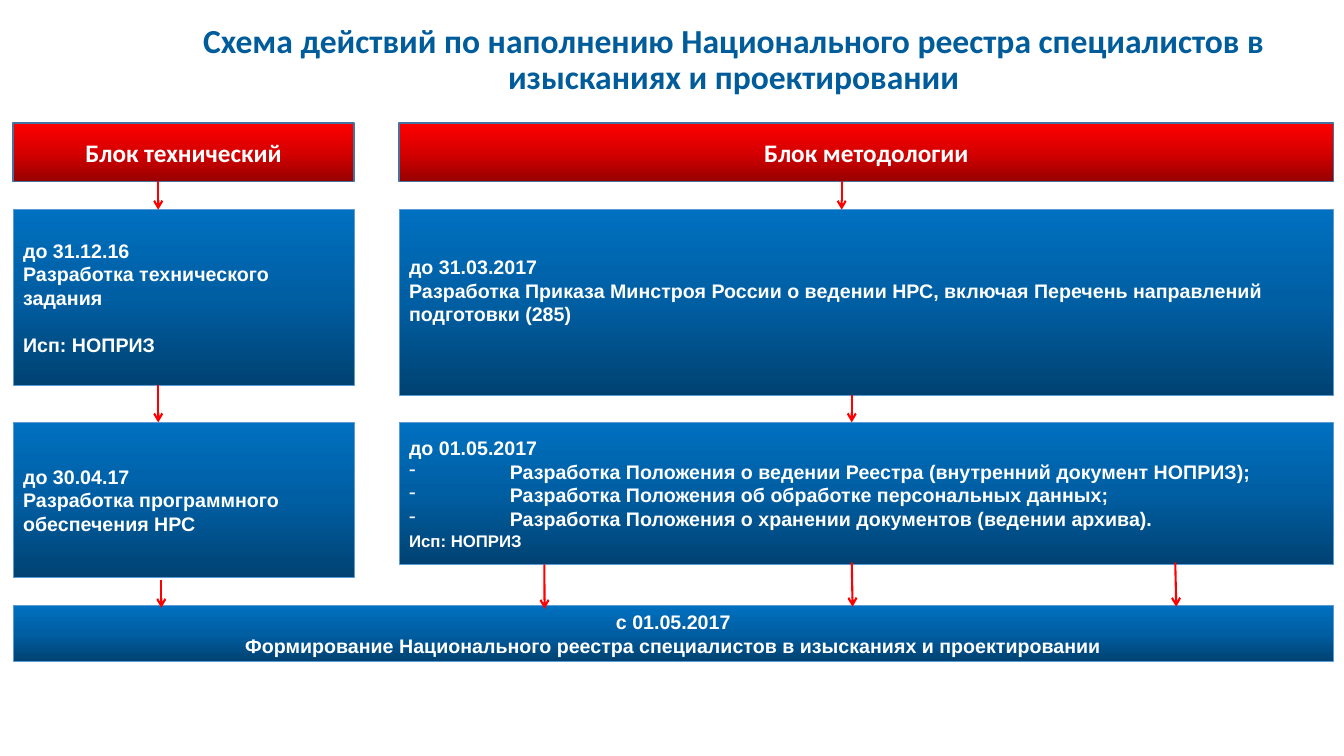
import copy

import pptx
import pptx.dml.color
import pptx.enum.dml
import pptx.enum.shapes
import pptx.enum.text
import pptx.oxml.ns
import pptx.util
from lxml import etree

Pt = pptx.util.Pt
CENTER = pptx.enum.text.PP_ALIGN.CENTER
LEFT = pptx.enum.text.PP_ALIGN.LEFT
MIDDLE = pptx.enum.text.MSO_ANCHOR.MIDDLE
qn = pptx.oxml.ns.qn

RED_GRADIENT = ("970000", "D70000", "FF0000")
BLUE_GRADIENT = ("004272", "005EA2", "0070C0")
LEFT_COLUMN = (9.4, 243.4)
RIGHT_COLUMN = (285.1, 667.4)
FULL_WIDTH = (9.4, 943.1)
HEADER_TOP, STAGE_1_TOP, STAGE_2_TOP, RESULT_TOP = 87.8, 149.8, 301.7, 432.7


def color(hex_string):
    return pptx.dml.color.RGBColor.from_string(hex_string)


def add_block(column, top, height, gradient, border, lines, size, font, alignment):
    """Add a gradient rectangle with white bold lines and return its text frame."""
    left, width = column
    shape = slide.shapes.add_shape(pptx.enum.shapes.MSO_SHAPE.RECTANGLE,
                                   Pt(left), Pt(top), Pt(width), Pt(height))
    shape.shadow.inherit = False
    shape.fill.gradient()
    shape.fill.gradient_angle = 90
    stop_list = shape.element.spPr.find(qn("a:gradFill")).find(qn("a:gsLst"))
    stop_list.insert(1, copy.deepcopy(stop_list[0]))
    for stop, position, stop_color in zip(shape.fill.gradient_stops, (0, 0.5, 1), gradient):
        stop.position = position
        stop.color.rgb = color(stop_color)
    border_color, border_width = border
    shape.line.color.rgb = color(border_color)
    shape.line.width = Pt(border_width)

    text_frame = shape.text_frame
    text_frame.word_wrap = True
    text_frame.vertical_anchor = MIDDLE
    text_frame.text = "\n".join(lines)
    for paragraph in text_frame.paragraphs:
        paragraph.alignment = alignment
        paragraph.font.size = Pt(size)
        paragraph.font.name = font
        paragraph.font.bold = True
        paragraph.font.color.rgb = color("FFFFFF")
    return text_frame


presentation = pptx.Presentation()
presentation.slide_width = Pt(960)
presentation.slide_height = Pt(540)
slide = presentation.slides.add_slide(presentation.slide_layouts[5])

# Title
title = slide.shapes.title
title.left, title.top, title.width, title.height = Pt(102.2), Pt(10), Pt(843.8), Pt(67)
title.text_frame.text = ("Схема действий по наполнению Национального реестра "
                         "специалистов в изысканиях и проектировании")
title.text_frame.word_wrap = True
title.text_frame.auto_size = pptx.enum.text.MSO_AUTO_SIZE.NONE
title.text_frame.vertical_anchor = MIDDLE
heading = title.text_frame.paragraphs[0]
heading.alignment = CENTER
heading.line_spacing = 0.9
heading.font.size = Pt(24)
heading.font.name = "Calibri"
heading.font.bold = True
heading.font.color.rgb = color("005C9B")

# Column headers
for column, caption in ((LEFT_COLUMN, "Блок технический"), (RIGHT_COLUMN, "Блок методологии")):
    add_block(column, HEADER_TOP, 41.8, RED_GRADIENT, ("43739E", 1),
              [caption], 18, "Calibri", CENTER)

# Stages
stages = {
    "order": (RIGHT_COLUMN, STAGE_1_TOP, 132.5, LEFT, [
        "до 31.03.2017",
        "Разработка Приказа Минстроя России о ведении НРС, включая Перечень "
        "направлений подготовки (285)"]),
    "regulations": (RIGHT_COLUMN, STAGE_2_TOP, 101.5, LEFT, [
        "до 01.05.2017",
        "Разработка Положения о ведении Реестра (внутренний документ НОПРИЗ);",
        "Разработка Положения об обработке персональных данных;",
        "Разработка Положения о хранении документов (ведении архива).",
        "Исп: НОПРИЗ"]),
    "result": (FULL_WIDTH, RESULT_TOP, 39.6, CENTER, [
        "с 01.05.2017",
        "Формирование Национального реестра специалистов в изысканиях и проектировании"]),
    "assignment": (LEFT_COLUMN, STAGE_1_TOP, 125.3, LEFT, [
        "до 31.12.16", "Разработка технического задания", "Исп: НОПРИЗ"]),
    "software": (LEFT_COLUMN, STAGE_2_TOP, 110.9, LEFT, [
        "до 30.04.17", "Разработка программного обеспечения НРС"]),
}
frames = {}
for name, (column, top, height, alignment, lines) in stages.items():
    frames[name] = add_block(column, top, height, BLUE_GRADIENT, ("5B9BD5", 0.5),
                             lines, 14, "Arial", alignment)

frames["order"].margin_bottom = Pt(20.5)
frames["assignment"].paragraphs[2].space_before = Pt(17)
regulations = frames["regulations"].paragraphs
regulations[4].font.size = Pt(12)
for paragraph in regulations[1:4]:
    properties = paragraph._p.get_or_add_pPr()
    properties.set("marL", str(Pt(72)))
    properties.set("indent", str(-Pt(72)))
    bullet = etree.Element(qn("a:buChar"), char="-")
    properties.insert_element_before(bullet, "a:tabLst", "a:defRPr", "a:extLst")

# Arrows: start x, start y, end x, end y
arrows = (
    (113, 129.6, 113, 149.8),
    (601.2, 129.6, 601.2, 149.8),
    (113, 275, 113, 301.7),
    (608.4, 282.2, 608.4, 301.7),
    (115.2, 414, 115.2, 434.2),
    (388.8, 403.2, 389, 434.9),
    (608.4, 401.8, 609, 433.4),
    (839.5, 401.8, 840.2, 433.4),
)
for ends in arrows:
    arrow = slide.shapes.add_connector(pptx.enum.shapes.MSO_CONNECTOR.STRAIGHT,
                                       *(Pt(value) for value in ends))
    arrow.line.color.rgb = color("FF0000")
    arrow.line.width = Pt(1.5)
    etree.SubElement(arrow.line._get_or_add_ln(), qn("a:tailEnd"), type="arrow")
    etree.SubElement(arrow.element.spPr, qn("a:effectLst"))

presentation.save("out.pptx")
